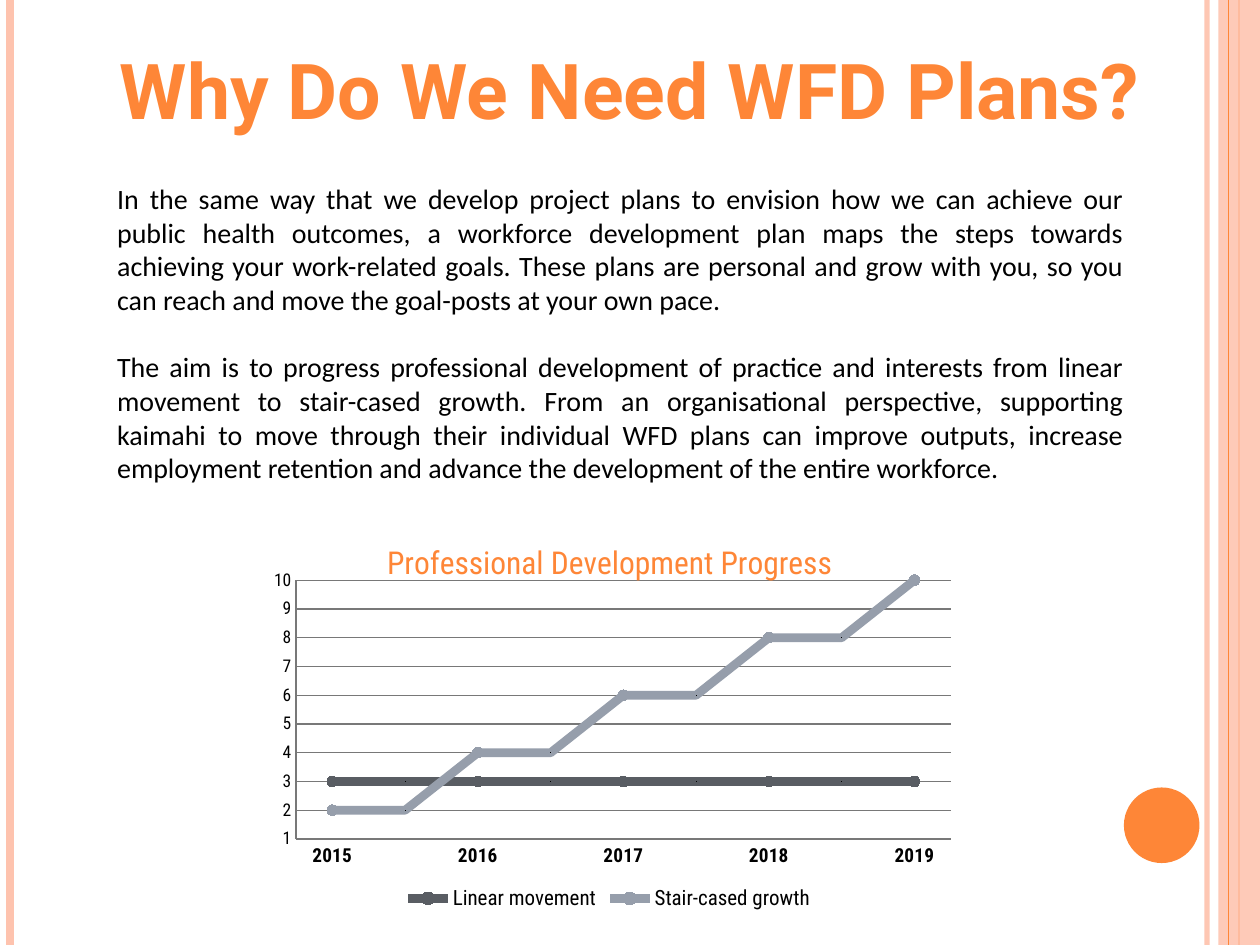
"""Build the slide on why workforce development plans are needed."""
from dataclasses import dataclass
from typing import Optional

from lxml import etree
from pptx import Presentation
from pptx.chart.data import CategoryChartData
from pptx.dml.color import RGBColor
from pptx.enum import chart as chart_enum, shapes, text
from pptx.oxml import ns
from pptx.util import Inches, Pt


@dataclass(frozen=True)
class Theme:
    accent: str = "FE8637"
    pale: str = "FEC3AE"
    ink: str = "000000"
    slate: str = "595D63"
    steel: str = "969EAB"
    grid: str = "787878"
    heading: str = "Roboto"
    body: str = "Calibri"
    label: str = "Roboto Condensed"
    title_size: float = 44
    body_size: float = 16
    chart_title_size: float = 18
    legend_size: float = 12
    category_size: float = 11
    value_size: float = 10


THEME = Theme()


@dataclass(frozen=True)
class Rail:
    x: float
    width: float
    color: str
    opacity: int = 100


@dataclass(frozen=True)
class Series:
    name: str
    values: tuple
    color: str


RAILS = (
    Rail(9.58, 3, THEME.pale, 93),
    Rail(0.08, 4.5, THEME.pale),
)
BAND_RAIL = Rail(9.83, 1.5, THEME.accent)
FRONT_RAIL = Rail(9.75, 0.75, THEME.accent)
PARAGRAPHS = (
    "In the same way that we develop project plans to envision how we can achieve our "
    "public health outcomes, a workforce development plan maps the steps towards achieving "
    "your work-related goals. These plans are personal and grow with you, so you can reach "
    "and move the goal-posts at your own pace.",
    "The aim is to progress professional development of practice and interests from linear "
    "movement to stair-cased growth. From an organisational perspective, supporting kaimahi "
    "to move through their individual WFD plans can improve outputs, increase employment "
    "retention and advance the development of the entire workforce.",
)
CATEGORIES = ("2015", " ", "2016", " ", "2017", " ", "2018", " ", "2019")
SERIES = (
    Series("Linear movement", (3,) * len(CATEGORIES), THEME.slate),
    Series("Stair-cased growth", (2, 2, 4, 4, 6, 6, 8, 8, 10), THEME.steel),
)


def set_all(target, values: dict) -> None:
    """Set each named attribute on the target."""
    for name, value in values.items():
        setattr(target, name, value)


def style_font(font, name: str, size: float, color: str, bold: bool = False) -> None:
    """Give a font its face, size, weight and colour."""
    set_all(font, {"name": name, "size": Pt(size), "bold": bold})
    font.color.rgb = RGBColor.from_string(color)


def style_line(line, color: str, width: float) -> None:
    """Give a line its colour and width."""
    line.color.rgb = RGBColor.from_string(color)
    line.width = Pt(width)


def set_opacity(shape, percent: int) -> None:
    """Set the opacity of the first colour in a shape."""
    color = shape._element.spPr.find(".//" + ns.qn("a:srgbClr"))
    etree.SubElement(color, ns.qn("a:alpha"), val=str(percent * 1000))


def place(shape, left: float, top: float, width: float, height: float) -> None:
    """Move and size a shape in inches."""
    set_all(shape, {"left": Inches(left), "top": Inches(top),
                    "width": Inches(width), "height": Inches(height)})


def add_rail(slide, rail: Rail, band=None) -> None:
    """Draw a full-height rail, joined to a band when one is given."""
    x = Inches(rail.x)
    connector = slide.shapes.add_connector(
        shapes.MSO_CONNECTOR.STRAIGHT, x, 0, x, Inches(7.5))
    style_line(connector.line, rail.color, rail.width)
    if rail.opacity < 100:
        set_opacity(connector, rail.opacity)
    etree.SubElement(connector._element.spPr, ns.qn("a:effectLst"))
    if band is not None:
        connector.begin_connect(band, 0)
        connector.end_connect(band, 2)


def add_solid(slide, kind, box: tuple, color: str):
    """Draw a preset shape with a plain fill and no outline."""
    shape = slide.shapes.add_shape(kind, *map(Inches, box))
    shape.shadow.inherit = False
    shape.fill.solid()
    shape.fill.fore_color.rgb = RGBColor.from_string(color)
    shape.line.fill.background()
    return shape


def add_decoration(slide) -> None:
    """Draw the side rails, the band and the disc."""
    band = add_solid(slide, shapes.MSO_SHAPE.RECTANGLE, (9.67, 0, 0.33, 7.5), THEME.pale)
    set_opacity(band, 87)
    for rail in RAILS:
        add_rail(slide, rail)
    add_rail(slide, BAND_RAIL, band)
    band._element.getparent().append(band._element)
    add_rail(slide, FRONT_RAIL)
    add_solid(slide, shapes.MSO_SHAPE.OVAL, (8.92, 6.25, 0.6, 0.6), THEME.accent)


def fill_text(placeholder, paragraphs: tuple, alignment, font: tuple, gap: float = 0) -> None:
    """Write unbulleted paragraphs into a placeholder."""
    frame = placeholder.text_frame
    frame.text = "\n".join(paragraphs)
    set_all(frame, {"word_wrap": True, "auto_size": text.MSO_AUTO_SIZE.NONE,
                    "vertical_anchor": text.MSO_ANCHOR.TOP})
    for paragraph in frame.paragraphs:
        set_all(paragraph, {"alignment": alignment, "line_spacing": 1.0,
                            "space_before": Pt(0), "space_after": Pt(gap)})
        properties = paragraph._element.get_or_add_pPr()
        properties.set("marL", "0")
        properties.set("indent", "0")
        etree.SubElement(properties, ns.qn("a:buNone"))
        style_font(paragraph.runs[0].font, *font)


def set_layout(element, index: int, **values) -> None:
    """Fix the position of a chart part by fractions of the chart."""
    for old in element.findall(ns.qn("c:layout")):
        element.remove(old)
    layout = etree.Element(ns.qn("c:layout"))
    manual = etree.SubElement(layout, ns.qn("c:manualLayout"))
    for name, value in values.items():
        etree.SubElement(manual, ns.qn("c:" + name), val=str(value))
    element.insert(index, layout)


def style_series(series, color: str) -> None:
    """Draw a thick line with markers on the named years only."""
    series.smooth = False
    style_line(series.format.line, color, 5)
    set_all(series.marker, {"style": chart_enum.XL_MARKER_STYLE.CIRCLE, "size": 6})
    series.marker.format.fill.solid()
    series.marker.format.fill.fore_color.rgb = RGBColor.from_string(color)
    style_line(series.marker.format.line, color, 0.75)
    for index in range(1, len(CATEGORIES), 2):
        point = series.points[index]
        point.marker.style = chart_enum.XL_MARKER_STYLE.NONE
        style_line(point.format.line, color, 5)


def add_progress_chart(slide) -> None:
    """Add the line chart of professional development."""
    data = CategoryChartData()
    data.categories = CATEGORIES
    for series in SERIES:
        data.add_series(series.name, series.values)
    box = map(Inches, (2.01, 4.06, 5.65, 3.21))
    chart = slide.shapes.add_chart(chart_enum.XL_CHART_TYPE.LINE_MARKERS, *box, data).chart
    style_font(chart.font, THEME.label, THEME.value_size, THEME.ink)
    chart.chart_title.text_frame.text = "Professional Development Progress"
    run = chart.chart_title.text_frame.paragraphs[0].runs[0]
    style_font(run.font, THEME.label, THEME.chart_title_size, THEME.accent)
    set_layout(chart.chart_title._element, 1, xMode="edge", yMode="edge", x=0.18, y=0.06)
    chart.has_legend = True
    set_all(chart.legend, {"position": chart_enum.XL_LEGEND_POSITION.BOTTOM,
                           "include_in_layout": False})
    style_font(chart.legend.font, THEME.label, THEME.legend_size, THEME.ink)
    set_all(chart.value_axis, {"minimum_scale": 1, "maximum_scale": 10, "major_unit": 1,
                               "has_major_gridlines": True})
    style_line(chart.value_axis.major_gridlines.format.line, THEME.grid, 0.75)
    for axis, size, bold in ((chart.category_axis, THEME.category_size, True),
                             (chart.value_axis, THEME.value_size, False)):
        axis.major_tick_mark = chart_enum.XL_TICK_MARK.NONE
        style_line(axis.format.line, THEME.grid, 0.75)
        style_font(axis.tick_labels.font, THEME.label, size, THEME.ink, bold)
    plot = chart.plots[0]
    plot.vary_by_categories = False
    set_layout(plot._element.getparent(), 0, layoutTarget="inner", xMode="edge",
               yMode="edge", x=0.06, y=0.17, w=0.92, h=0.64)
    for drawn, series in zip(plot.series, SERIES):
        style_series(drawn, series.color)


def main() -> None:
    """Build and save the presentation."""
    presentation = Presentation()
    set_all(presentation, {"slide_width": Inches(10), "slide_height": Inches(7.5)})
    slide = presentation.slides.add_slide(presentation.slide_layouts[1])
    title, body = slide.placeholders
    place(title, 0, 0.29, 10, 1.58)
    fill_text(title, ("Why Do We Need WFD Plans?",), text.PP_ALIGN.CENTER,
              (THEME.heading, THEME.title_size, THEME.accent, True))
    place(body, 0.83, 1.39, 8.19, 2.83)
    fill_text(body, PARAGRAPHS, text.PP_ALIGN.JUSTIFY,
              (THEME.body, THEME.body_size, THEME.ink), gap=19.5)
    add_decoration(slide)
    add_progress_chart(slide)
    presentation.save("out.pptx")


if __name__ == "__main__":
    main()
